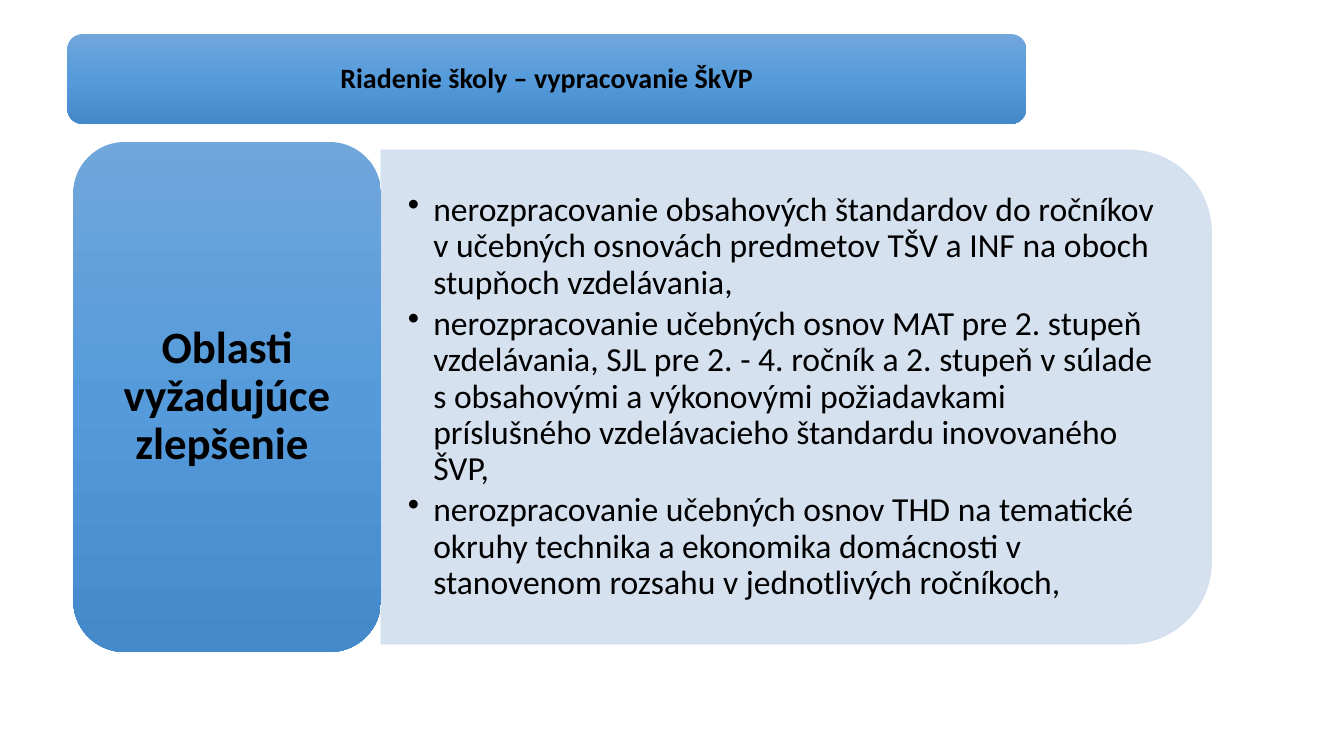
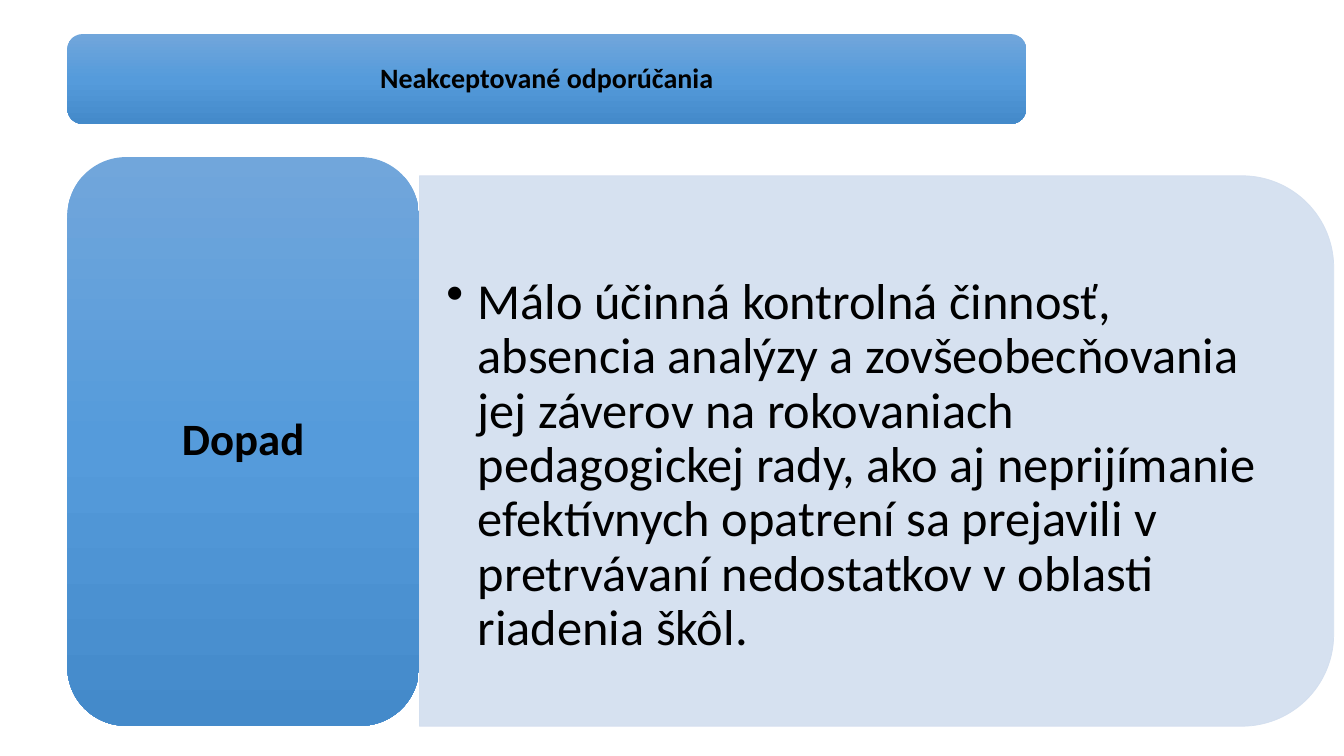
"""Build two slides on school management findings: a title bar, a label card and a text panel each."""
from lxml.etree import SubElement
from pptx import Presentation
from pptx.dml.color import RGBColor
from pptx.enum.shapes import MSO_SHAPE
from pptx.enum.text import MSO_ANCHOR, PP_ALIGN
from pptx.oxml import parse_xml
from pptx.oxml.ns import nsdecls, qn
from pptx.util import Cm, Pt

FONT = "Calibri"
BLACK = "000000"
PANEL = "D2DEEF"
GRADIENT = [(0, "71A6DB"), (50, "559BDB"), (100, "448ACA")]
TITLE_BOX = (1.7, 0.86, 24.16, 2.26)

SLIDES = [
    {
        "title": "Riadenie školy – vypracovanie ŠkVP",
        "label": "Oblasti vyžadujúce zlepšenie ",
        "card": (1.85, 3.58, 7.75, 12.85),
        "panel": (9.6, 3.78, 20.93, 12.45),
        "size": 24, "indent": 0.64, "drop": 0,
        "items": [
            "nerozpracovanie obsahových štandardov do ročníkov v učebných osnovách "
            "predmetov TŠV a INF na oboch stupňoch vzdelávania,",
            "nerozpracovanie učebných osnov MAT pre 2. stupeň vzdelávania, SJL pre "
            "2. - 4. ročník a 2. stupeň v súlade s obsahovými a výkonovými požiadavkami "
            "príslušného vzdelávacieho štandardu inovovaného ŠVP,",
            "nerozpracovanie učebných osnov THD na tematické okruhy technika a ekonomika "
            "domácnosti v stanovenom rozsahu v jednotlivých ročníkoch,",
        ],
    },
    {
        "title": "Neakceptované odporúčania",
        "label": "Dopad",
        "card": (1.7, 3.96, 8.86, 14.33),
        "panel": (10.57, 4.43, 23.04, 13.87),
        "size": 36, "indent": 0.79, "drop": 0.38,
        "items": [
            "Málo účinná kontrolná činnosť, absencia analýzy a zovšeobecňovania jej "
            "záverov na rokovaniach pedagogickej rady, ako aj neprijímanie efektívnych "
            "opatrení sa prejavili v pretrvávaní nedostatkov v oblasti riadenia škôl.",
        ],
    },
]


def rgb(color):
    return RGBColor.from_string(color)


def add_card(slide, box, text, size, inset_x, inset_y):
    s = slide.shapes.add_shape(MSO_SHAPE.ROUNDED_RECTANGLE, *map(Cm, box))
    s.shadow.inherit = False
    s.line.fill.background()
    stops = "".join(
        f'<a:gs pos="{pos * 1000}"><a:srgbClr val="{color}"/></a:gs>' for pos, color in GRADIENT
    )
    s._element.spPr.insert(2, parse_xml(
        f'<a:gradFill {nsdecls("a")}><a:gsLst>{stops}</a:gsLst><a:lin ang="5400000"/></a:gradFill>'
    ))
    tf = s.text_frame
    tf.word_wrap = True
    tf.vertical_anchor = MSO_ANCHOR.MIDDLE
    tf.margin_left = tf.margin_right = Cm(inset_x)
    tf.margin_top = tf.margin_bottom = Cm(inset_y)
    p = tf.paragraphs[0]
    p.text = text
    p.alignment = PP_ALIGN.CENTER
    p.line_spacing = 0.9
    p.font.name, p.font.size, p.font.bold = FONT, Pt(size), True
    p.font.color.rgb = rgb(BLACK)


prs = Presentation()
prs.slide_width, prs.slide_height = Cm(33.87), Cm(19.05)

for data in SLIDES:
    slide = prs.slides.add_slide(prs.slide_layouts[6])

    left, top, width, height = data["panel"]
    turn = (width - height) / 2
    s = slide.shapes.add_shape(
        MSO_SHAPE.ROUND_2_SAME_RECTANGLE,
        Cm(left + turn), Cm(top - turn), Cm(height), Cm(width),
    )
    s.rotation = 90
    s.shadow.inherit = False
    s.fill.solid()
    s.fill.fore_color.rgb = s.line.color.rgb = rgb(PANEL)
    s.line.width = Pt(0.5)
    for color in s._element.spPr.iter(qn("a:srgbClr")):
        SubElement(color, qn("a:alpha"), val="90000")

    corner = 0.05 * height
    tb = slide.shapes.add_textbox(
        Cm(left), Cm(top + corner + data["drop"]), Cm(width - corner), Cm(height - 2 * corner)
    )
    tf = tb.text_frame
    tf.word_wrap = True
    tf.vertical_anchor = MSO_ANCHOR.MIDDLE
    tf.margin_left = tf.margin_right = Cm(0.68)
    tf.margin_top = tf.margin_bottom = Cm(0.36)
    for i, item in enumerate(data["items"]):
        p = tf.add_paragraph() if i else tf.paragraphs[0]
        p.text = item
        p.line_spacing = 0.9
        p.space_after = Pt(0.15 * data["size"])
        p.font.name, p.font.size = FONT, Pt(data["size"])
        p.font.color.rgb = rgb(BLACK)
        pPr = p._p.get_or_add_pPr()
        pPr.set("marL", str(Cm(data["indent"])))
        pPr.set("indent", str(-Cm(data["indent"])))
        bullet = parse_xml(f'<a:buChar {nsdecls("a")} char="•"/>')
        pPr.insert_element_before(bullet, "a:tabLst", "a:defRPr", "a:extLst")

    add_card(slide, data["card"], data["label"], 32, 0.33, 0.18)
    add_card(slide, TITLE_BOX, data["title"], 20, 0.2, 0.2)

prs.save("out.pptx")
